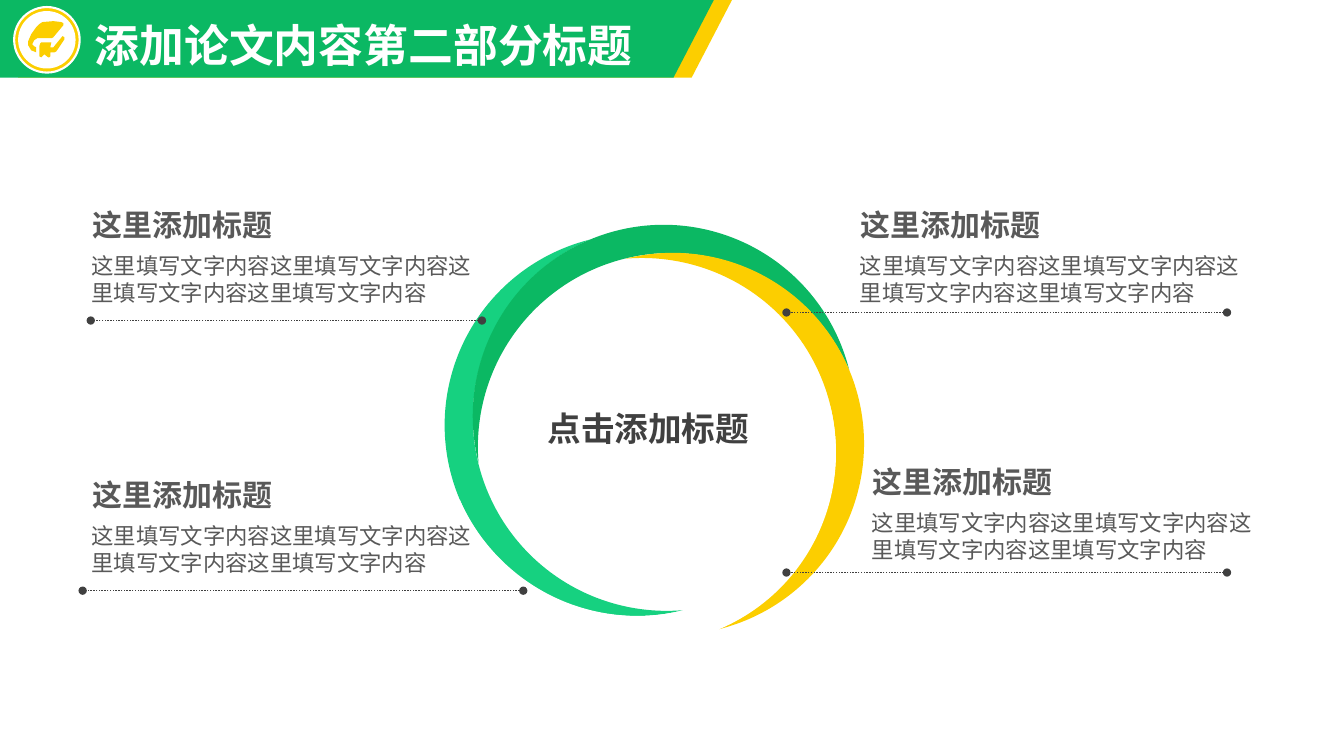
"""Build a section slide with a ring of four moons and four captions."""
from dataclasses import dataclass
from math import cos, radians, sin

from lxml import etree
from pptx import Presentation
from pptx.dml.color import RGBColor
from pptx.enum.dml import MSO_LINE
from pptx.enum.shapes import MSO_CONNECTOR, MSO_SHAPE
from pptx.enum.text import MSO_AUTO_SIZE, PP_ALIGN
from pptx.oxml.ns import qn
from pptx.util import Inches, Pt

OVAL, MOON = MSO_SHAPE.OVAL, MSO_SHAPE.MOON
STRAIGHT, DOTS = MSO_CONNECTOR.STRAIGHT, MSO_LINE.ROUND_DOT
GROW = MSO_AUTO_SIZE.SHAPE_TO_FIT_TEXT
LEFT, CENTER = PP_ALIGN.LEFT, PP_ALIGN.CENTER


@dataclass(frozen=True)
class Theme:
    """Colours, font and type sizes of the slide."""
    green: str = "0BB863"
    mint: str = "16D180"
    gold: str = "FCCE00"
    white: str = "FFFFFF"
    dark: str = "404040"
    gray: str = "595959"
    font: str = "Arial"
    head: float = 32
    hub: float = 24
    title: float = 21.4
    body: float = 16


THEME = Theme()

CAP = [
    [(0.62, 0.36), (0.64, 0.37), (0.64, 0.39), (0.56, 0.51), (0.54, 0.52),
     (0.5, 0.52), (0.5, 0.56), (0.49, 0.57), (0.48, 0.57), (0.44, 0.54),
     (0.41, 0.57), (0.39, 0.56), (0.39, 0.46), (0.4, 0.43), (0.41, 0.42),
     (0.51, 0.42), (0.5, 0.47), (0.53, 0.47)],
    [(0.53, 0.21), (0.61, 0.22), (0.63, 0.23), (0.63, 0.25), (0.53, 0.37),
     (0.51, 0.38), (0.37, 0.38), (0.34, 0.4), (0.32, 0.44), (0.34, 0.46),
     (0.36, 0.47), (0.36, 0.52), (0.31, 0.5), (0.28, 0.45), (0.28, 0.41),
     (0.31, 0.34), (0.36, 0.27), (0.39, 0.24), (0.42, 0.22)],
]

TITLE = "这里添加标题"
BODY = "这里填写文字内容" * 4
CARDS = [
    ((0.81, 2), (0.9, 4.78, 3.18)),
    ((0.81, 4.68), (0.82, 5.19, 5.86)),
    ((8.43, 2), (7.8, 12.17, 3.1)),
    ((8.55, 4.55), (7.8, 12.17, 5.68)),
]


def rgb(hue):
    """Return a colour from its hex text."""
    return RGBColor.from_string(hue)


def paint(shape, fill, edge=None):
    """Give a shape a plain fill and an optional outline."""
    shape.shadow.inherit = False
    shape.fill.solid()
    shape.fill.fore_color.rgb = rgb(fill)
    if edge:
        shape.line.color.rgb = rgb(edge)
        shape.line.width = Pt(1.5)
    else:
        shape.line.fill.background()
    return shape


def form(shapes, kind, box, fill, edge=None):
    """Add a painted preset shape in a box."""
    return paint(shapes.add_shape(kind, *map(Inches, box)), fill, edge)


def outline(shapes, paths, fill):
    """Add a painted freeform made of closed paths."""
    paths = [[(Inches(x), Inches(y)) for x, y in path] for path in paths]
    pen = shapes.build_freeform(*paths[0][0])
    for spot, path in enumerate(paths):
        if spot:
            pen.move_to(*path[0])
        pen.add_line_segments(path[1:], close=True)
    return paint(pen.convert_to_shape(), fill)


def write(shapes, box, words, size, hue, bold=False, align=LEFT, space=None):
    """Add a wrapped text box with one paragraph."""
    frame = shapes.add_textbox(*map(Inches, box)).text_frame
    para = frame.paragraphs[0]
    run = para.add_run()
    run.text = words
    run.font.color.rgb = rgb(hue)
    looks = {
        frame: {"word_wrap": True, "auto_size": GROW},
        para: {"alignment": align, "line_spacing": space},
        run.font: {"name": THEME.font, "size": Pt(size), "bold": bold},
    }
    for part, look in looks.items():
        for key, value in look.items():
            setattr(part, key, value)


def rule(shapes, left, right, y):
    """Add a dotted line with a dot at each end."""
    wire = shapes.add_connector(STRAIGHT, *map(Inches, (right, y, left, y)))
    wire.line.color.rgb = rgb(THEME.dark)
    wire.line.width = Pt(1)
    wire.line.dash_style = DOTS
    props = wire._element.spPr
    for tag in ("a:headEnd", "a:tailEnd"):
        etree.SubElement(props.find(qn("a:ln")), qn(tag), type="oval")
    etree.SubElement(props, qn("a:effectLst"))


def badge(shapes, left, top, size):
    """Draw the round cap badge."""
    group = shapes.add_group_shape().shapes
    gap = 0.04
    inner = size - 2 * gap
    form(group, OVAL, (left, top, size, size), THEME.gold, THEME.white)
    form(group, OVAL, (left + gap, top + gap, inner, inner), THEME.white)
    dx, dy = left - 0.14, top - 0.07
    outline(group, [[(x + dx, y + dy) for x, y in path] for path in CAP],
            THEME.gold)


def banner(shapes, left, top, width, height):
    """Draw the slanted banner with its heading and badge."""
    for shift, hue in ((0.18, THEME.gold), (0, THEME.green)):
        x, end = left + shift, left + shift + width
        outline(shapes, [[(x, top), (end, top), (end - 0.4, top + height),
                          (x, top + height)]], hue)
    write(shapes, (left + 0.84, top - 0.14, width - 0.84, height + 0.14),
          "添加论文内容第二部分标题", THEME.head, THEME.white, True, space=1.5)
    badge(shapes, left + 0.14, top + 0.07, 0.65)


def ring(shapes, x, y, reach):
    """Draw four moons turned about a centre, with the hub title."""
    wide, high = 1.9, 3.79
    hues = (THEME.mint, THEME.green, THEME.gold, THEME.white)
    for step, hue in enumerate(hues):
        turn = radians(172.9 + 90 * step)
        spot = (x + reach * cos(turn) - wide / 2,
                y + reach * sin(turn) - high / 2)
        moon = form(shapes, MOON, (*spot, wide, high), hue)
        moon.adjustments[0] = 0.152
        moon.rotation = (345.9 + 90 * step) % 360
    write(shapes, (x - 1.22, y - 0.31, 2.32, 0.5), "点击添加标题",
          THEME.hub, THEME.dark, True, CENTER)


def card(shapes, left, top):
    """Write one caption with its title."""
    write(shapes, (left, top + 0.45, 4.07, 0.64), BODY,
          THEME.body, THEME.gray)
    write(shapes, (left + 0.01, top, 3.04, 0.46), TITLE,
          THEME.title, THEME.gray, True)


def main():
    """Build and save the slide."""
    deck = Presentation()
    deck.slide_width, deck.slide_height = Inches(13.33), Inches(7.5)
    shapes = deck.slides.add_slide(deck.slide_layouts[6]).shapes
    banner(shapes, 0, 0, 7.08, 0.77)
    ring(shapes, 6.49, 4.31, 1.11)
    for _, ends in CARDS:
        rule(shapes, *ends)
    for spot, _ in CARDS:
        card(shapes, *spot)
    deck.save("out.pptx")


if __name__ == "__main__":
    main()
